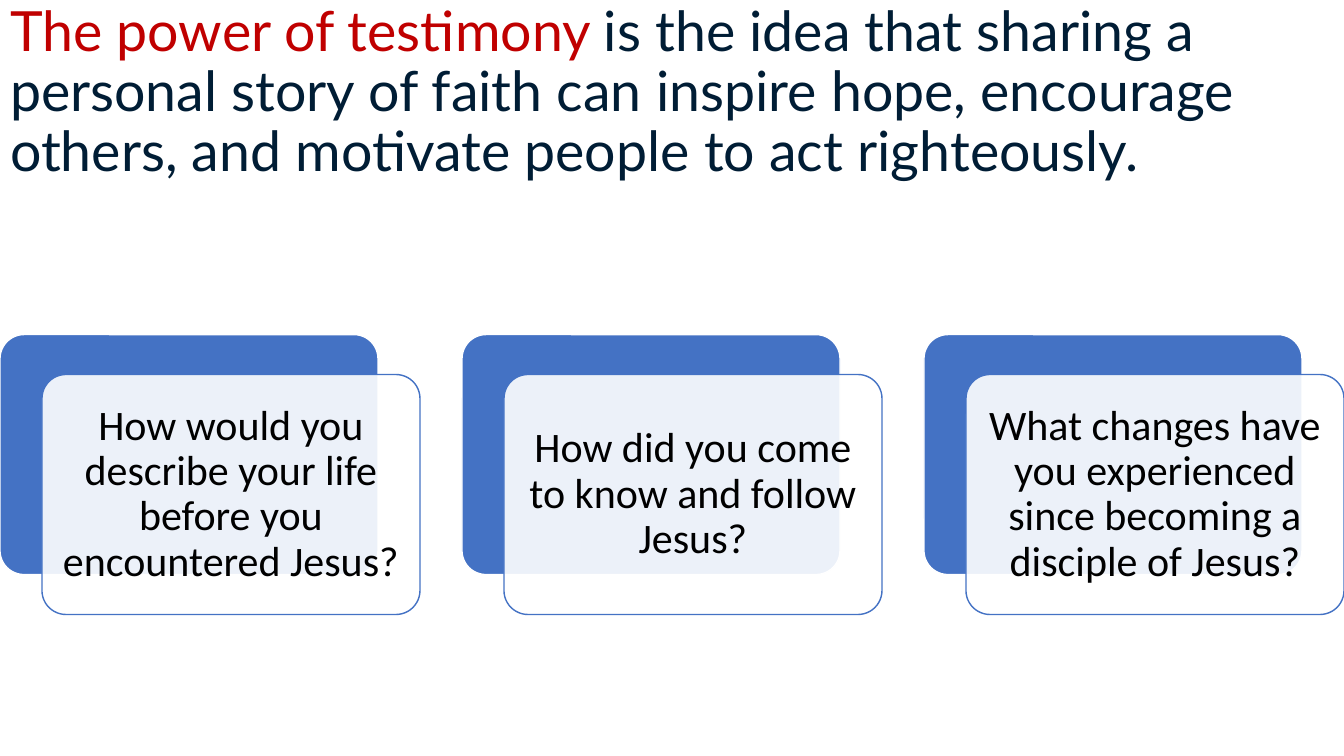
from lxml.etree import SubElement
from pptx import Presentation
from pptx.dml.color import RGBColor
from pptx.enum.shapes import MSO_SHAPE
from pptx.enum.text import MSO_ANCHOR, MSO_AUTO_SIZE, PP_ALIGN
from pptx.oxml.ns import qn
from pptx.util import Pt

SLIDE_W, SLIDE_H = 960, 540
BLUE, WHITE = "4472C4", "FFFFFF"
TITLE_RUNS = [
    ("The power of testimony ", "C00000"),
    ("is the idea that sharing a personal story of faith can inspire hope, "
     "encourage others, and motivate people to act righteously.", "001D35"),
]
QUESTIONS = [
    "How would you describe your life before you encountered Jesus?",
    "How did you come to know and follow Jesus?",
    "What changes have you experienced since becoming a disciple of Jesus?",
]


def rgb(color):
    return RGBColor.from_string(color)


def add_title(slide, x, y, w, h):
    sp = slide.shapes.title
    sp.left, sp.top, sp.width, sp.height = Pt(x), Pt(y), Pt(w), Pt(h)
    tf = sp.text_frame
    tf.word_wrap = True
    tf.auto_size = MSO_AUTO_SIZE.NONE
    tf.vertical_anchor = MSO_ANCHOR.MIDDLE
    p = tf.paragraphs[0]
    p.alignment = PP_ALIGN.LEFT
    p.line_spacing = 0.9
    p.font.size = Pt(39.6)
    p.font.name = "Lato"
    for text, color in TITLE_RUNS:
        r = p.add_run()
        r.text = text
        r.font.color.rgb = rgb(color)


def add_panel(slide, x, y, w, h, fill, line):
    sp = slide.shapes.add_shape(
        MSO_SHAPE.ROUNDED_RECTANGLE, Pt(x), Pt(y), Pt(w), Pt(h))
    sp.adjustments[0] = 0.1
    sp.shadow.inherit = False
    sp.fill.solid()
    sp.fill.fore_color.rgb = rgb(fill)
    sp.line.color.rgb = rgb(line)
    sp.line.width = Pt(1)
    return sp


def set_opacity(sp, percent):
    color = sp.fill._xPr.find(qn("a:solidFill"))[0]
    SubElement(color, qn("a:alpha")).set("val", str(percent * 1000))


def add_question(slide, x, y, w, h, text):
    """Place a blue panel with a translucent text card offset in front of it."""
    dx, dy = 30, 28.5
    panel_w, panel_h = w - dx, h - dy
    add_panel(slide, x, y, panel_w, panel_h, BLUE, WHITE)
    card = add_panel(slide, x + dx, y + dy, panel_w, panel_h, WHITE, BLUE)
    set_opacity(card, 90)
    tf = card.text_frame
    tf.word_wrap = True
    tf.vertical_anchor = MSO_ANCHOR.MIDDLE
    tf.margin_left = tf.margin_right = Pt(8.6)
    tf.margin_top = tf.margin_bottom = Pt(8.6)
    p = tf.paragraphs[0]
    p.text = text
    p.alignment = PP_ALIGN.CENTER
    p.line_spacing = 0.9
    p.font.size = Pt(30)
    p.font.name = "Calibri"
    p.font.color.rgb = rgb("000000")


def add_questions(slide, x, y, w, h):
    gap = 30
    count = len(QUESTIONS)
    item_w = (w - gap * (count - 1)) / count
    for i, text in enumerate(QUESTIONS):
        add_question(slide, x + i * (item_w + gap), y, item_w, h, text)


def main():
    prs = Presentation()
    prs.slide_width, prs.slide_height = Pt(SLIDE_W), Pt(SLIDE_H)
    slide = prs.slides.add_slide(prs.slide_layouts[5])
    add_title(slide, 0, 0, SLIDE_W, 133.2)
    add_questions(slide, 0, 239, SLIDE_W, 199.9)
    prs.save("out.pptx")


if __name__ == "__main__":
    main()
